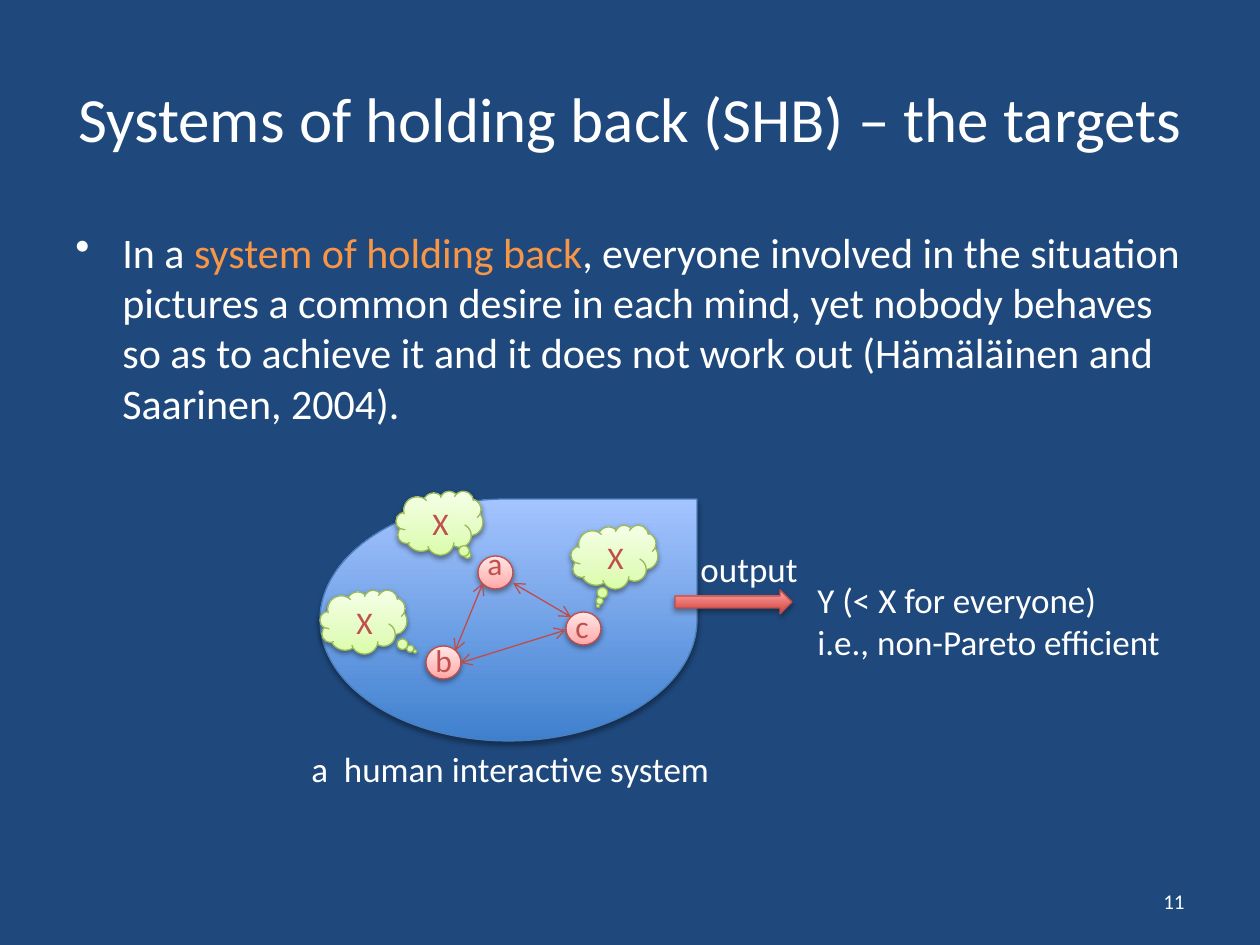
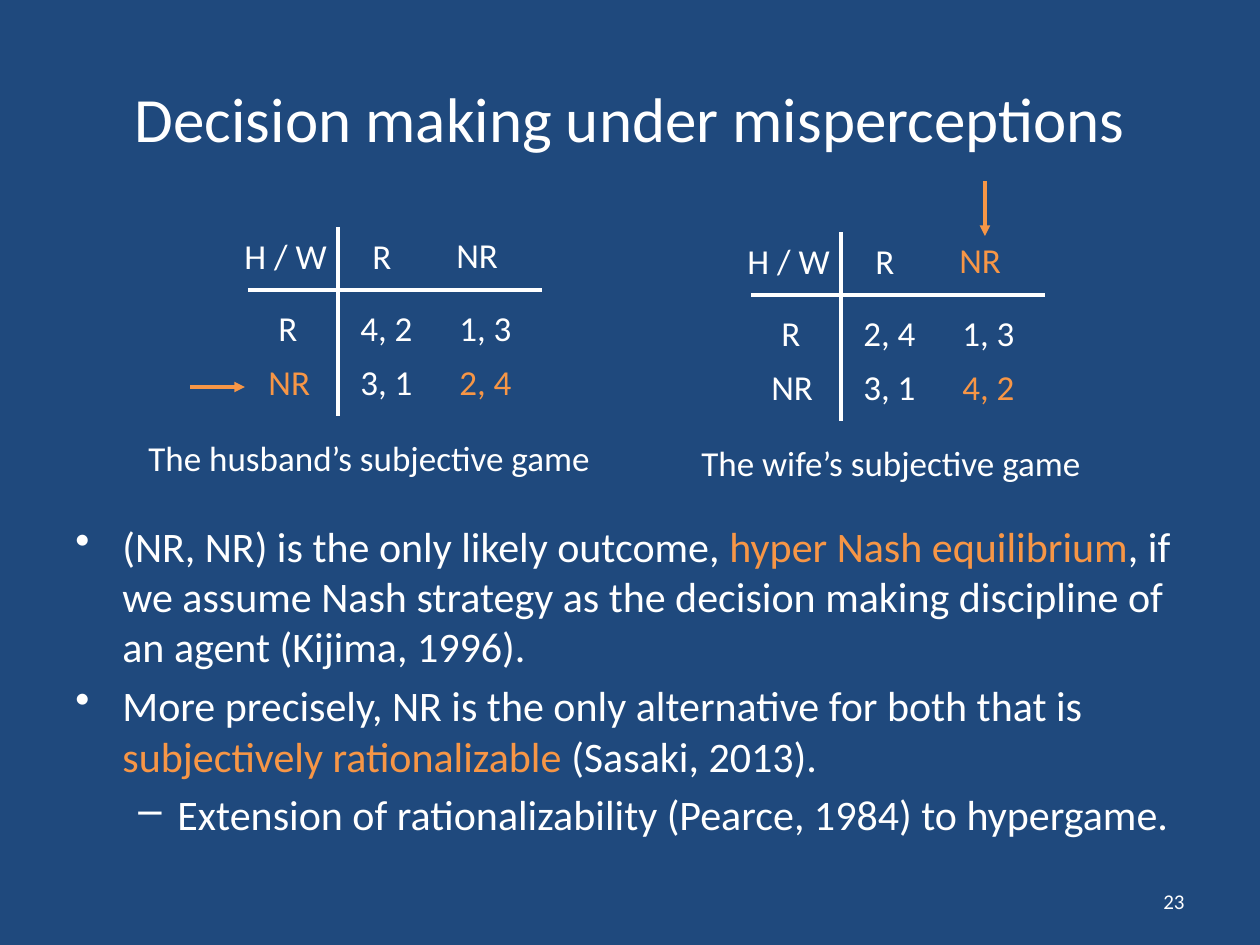
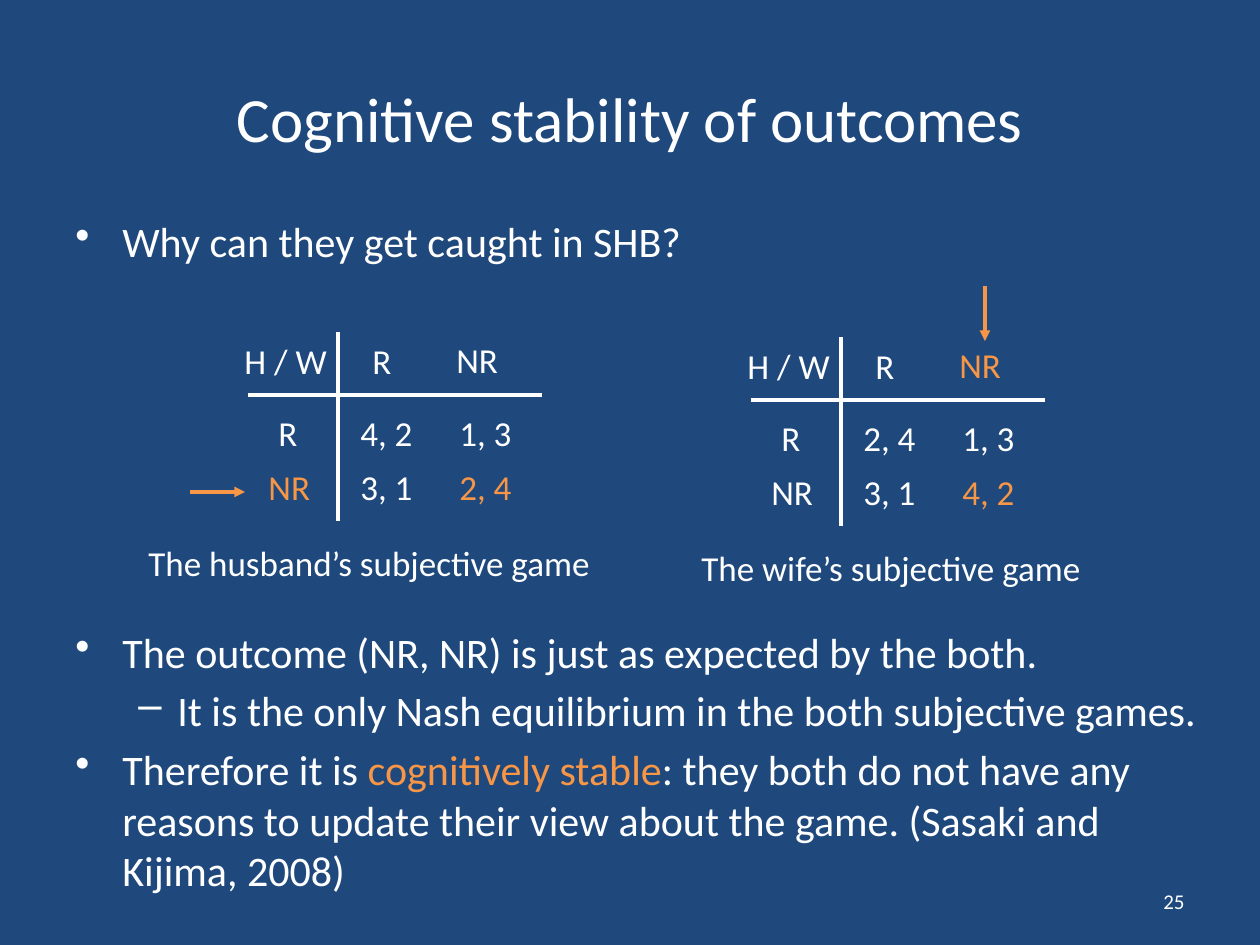
from dataclasses import dataclass

from lxml import etree
from pptx import Presentation
from pptx import util as u
from pptx.dml.color import RGBColor
from pptx.enum import shapes, text as txt
from pptx.oxml.ns import qn

PX = 7257  # EMU in one px, 126 px to the inch


@dataclass(frozen=True)
class Theme:
    font: str = "Calibri"
    ground: str = "1F497D"
    ink: str = "FFFFFF"
    accent: str = "F79646"
    letter: str = "C0504D"
    red_line: str = "BF4C48"
    blue_line: str = "4B7EBC"
    green_line: str = "98B955"
    blue: tuple = ((0, "3F80CE"), (100, "A4C4FF"))
    red: tuple = ((0, "D1403C"), (100, "FFA6A5"))
    pink: tuple = ((0, "FFA6A5"), (35, "FFC0BF"), (100, "FFE7E7"))
    green: tuple = ((0, "DAFDA7"), (35, "E4FCC2"), (100, "F5FFE7"))
    title: int = 36
    body: int = 24
    label: int = 20
    mark: int = 18
    number: int = 12


THEME = Theme()
# Bullet sign: left margin and hanging indent in px
BULLETS = {"•": (47, -47), "–": (102, -39)}


def write(page, area, content, size=THEME.label, color=THEME.ink, wrap=False,
          align=txt.PP_ALIGN.LEFT, anchor=txt.MSO_ANCHOR.TOP, gaps=None, tab=None):
    """Add text; |bars| mark accented words, a leading • or – makes a bullet."""
    box = page.shapes.add_textbox(*(n * PX for n in area))
    frame = box.text_frame
    frame.word_wrap = wrap
    frame.auto_size = txt.MSO_AUTO_SIZE.NONE if wrap else txt.MSO_AUTO_SIZE.SHAPE_TO_FIT_TEXT
    frame.vertical_anchor = anchor
    for index, line in enumerate(content.split("\n")):
        para = frame.paragraphs[0] if index == 0 else frame.add_paragraph()
        para.alignment = align
        if line[0] in BULLETS:
            sign, line = line.split(" ", 1)
            para.space_before = u.Pt((gaps or {}).get(index, 4.8))
            props = para._p.get_or_add_pPr()
            margin, indent = BULLETS[sign]
            props.set("marL", str(margin * PX))
            props.set("indent", str(indent * PX))
            etree.SubElement(props, qn("a:buChar"), char=sign)
        if tab:
            stops = etree.SubElement(para._p.get_or_add_pPr(), qn("a:tabLst"))
            etree.SubElement(stops, qn("a:tab"), pos=str(tab * PX), algn="l")
        for part, words in enumerate(line.split("|")):
            if words:
                span = para.add_run()
                span.text = words
                span.font.name = THEME.font
                span.font.size = u.Pt(size)
                span.font.color.rgb = RGBColor.from_string(THEME.accent if part % 2 else color)


def draw_line(page, ends, color=THEME.ink, width=2, head=None, tail=None):
    line = page.shapes.add_connector(shapes.MSO_CONNECTOR.STRAIGHT, *(n * PX for n in ends))
    line.line.color.rgb = RGBColor.from_string(color)
    line.line.width = u.Pt(width)
    props = line.element.spPr
    for tag, kind in (("a:headEnd", head), ("a:tailEnd", tail)):
        if kind:
            etree.SubElement(props.find(qn("a:ln")), qn(tag), type=kind)
    etree.SubElement(props, qn("a:effectLst"))


deck = Presentation()
deck.slide_width, deck.slide_height = u.Inches(10), u.Inches(7.5)
ground = deck.slide_master.background.fill
ground.solid()
ground.fore_color.rgb = RGBColor.from_string(THEME.ground)

# Title, page number, body area, body text, space before single paragraphs
PAGES = [
    ("Systems of holding back (SHB) – the targets", "11", (63, 220, 1134, 706),
     "• In a |system of holding back|, everyone involved in the situation pictures a common "
     "desire in each mind, yet nobody behaves so as to achieve it and it does not work out "
     "(Hämäläinen and Saarinen, 2004).", None),
    ("Decision making under misperceptions", "23", (63, 514, 1155, 412),
     "• (NR, NR) is the only likely outcome, |hyper Nash equilibrium|, if we assume Nash "
     "strategy as the decision making discipline of an agent (Kijima, 1996).\n"
     "• More precisely, NR is the only alternative for both that is "
     "|subjectively rationalizable |(Sasaki, 2013).\n"
     "– Extension of rationalizability (Pearce, 1984) to hypergame.", None),
    ("Cognitive stability of outcomes", "25", (63, 209, 1155, 717),
     "• Why can they get caught in SHB?\n"
     "• The outcome (NR, NR) is just as expected by the both.\n"
     "– It is the only Nash equilibrium in the both subjective games.\n"
     "• Therefore it is |cognitively stable|: they both do not have any reasons to update "
     "their view about the game. (Sasaki and Kijima, 2008)", {1: 206}),
]
pages = []
for title, number, area, body, gaps in PAGES:
    page = deck.slides.add_slide(deck.slide_layouts[6])
    write(page, (63, 38, 1134, 158), title, size=THEME.title, wrap=True,
          align=txt.PP_ALIGN.CENTER, anchor=txt.MSO_ANCHOR.MIDDLE)
    write(page, area, body, size=THEME.body, wrap=True, gaps=gaps)
    write(page, (903, 876, 294, 50), number, size=THEME.number, wrap=True,
          align=txt.PP_ALIGN.RIGHT, anchor=txt.MSO_ANCHOR.MIDDLE)
    pages.append(page)
system_page, *game_pages = pages

# Human interactive system: outline, agents, output arrow, thoughts
AGENTS = [("a", 478, 556, -18), ("b", 426, 646, -11), ("c", 566, 612, -11)]
THOUGHTS = [(396, 491, (0.332, 0.515)), (320, 590, (0.592, 0.46)), (571, 525, (-0.188, 0.762))]
KIND = shapes.MSO_SHAPE
figures = [(KIND.TEAR, (320, 499, 377, 242), THEME.blue, THEME.blue_line, 35, 1.8, ())]
figures += [(KIND.OVAL, (x, y, 35, 33), THEME.pink, THEME.red_line, 38, 1.6, ())
            for _, x, y, _ in AGENTS]
figures += [(KIND.RIGHT_ARROW, (675, 590, 117, 24), THEME.red, THEME.red_line, 35, 1.8, ())]
figures += [(KIND.CLOUD_CALLOUT, (x, y, 87, 64), THEME.green, THEME.green_line, 38, 1.6, pointer)
            for x, y, pointer in THOUGHTS]
for kind, area, stops, edge, opacity, distance, adjustments in figures:
    shape = system_page.shapes.add_shape(kind, *(n * PX for n in area))
    for index, value in enumerate(adjustments):
        shape.adjustments[index] = value
    shape.line.color.rgb = RGBColor.from_string(edge)
    shape.line.width = u.Pt(0.75)
    shape.fill.gradient()
    shape.fill.gradient_angle = 90
    props = shape.element.spPr
    stop_list = props.find(qn("a:gradFill")).find(qn("a:gsLst"))
    stop_list.clear()
    for position, color in stops:
        stop = etree.SubElement(stop_list, qn("a:gs"), pos=str(position * 1000))
        etree.SubElement(stop, qn("a:srgbClr"), val=color)
    shape.shadow.inherit = False
    shadow = etree.SubElement(props.find(qn("a:effectLst")), qn("a:outerShdw"),
                              blurRad=str(u.Pt(3.1)), dist=str(u.Pt(distance)),
                              dir="5400000", rotWithShape="0")
    tint = etree.SubElement(shadow, qn("a:srgbClr"), val="000000")
    etree.SubElement(tint, qn("a:alpha"), val=str(opacity * 1000))

# Interactions and labels of the system
for ends in ((455, 651, 483, 583), (460, 663, 566, 630), (571, 617, 513, 583)):
    draw_line(system_page, ends, THEME.red_line, 0.75, head="arrow", tail="arrow")
for name, x, y, rise in AGENTS:
    write(system_page, (x - 3, y + rise, 40, 50), name, size=THEME.mark, color=THEME.letter)
for x, y, _ in THOUGHTS:
    write(system_page, (x + 24, y + 7, 42, 50), "X", size=THEME.mark, color=THEME.letter)
write(system_page, (805, 572, 372, 97), "Y (< X for everyone)\ni.e., non-Pareto efficient")
write(system_page, (299, 741, 427, 55), "a  human interactive system")
write(system_page, (688, 541, 123, 55), "output")

# Subjective games: left, drop, row NR, column NR, payoffs, caption with left and width, arrow
GAMES = [
    (232, 0, "|NR|", "NR", ("4, 2\t1, 3", "3, 1\t|2, 4|"),
     "The husband’s subjective game", 136, 470, (190, 159, 245, 159)),
    (735, 5, "NR", "|NR|", ("2, 4\t1, 3", "3, 1\t|4, 2|"),
     "The wife’s subjective game", 689, 408, (985, -47, 985, 8)),
]
for page, top in zip(game_pages, (228, 333)):
    for left, drop, row, column, payoffs, caption, caption_left, caption_width, arrow in GAMES:
        y = top + drop
        draw_line(page, (left + 16, y + 62, left + 310, y + 62))
        draw_line(page, (left + 106, y + 188, left + 106, y - 1))
        for dx, dy, width, label in ((0, 0, 108, "H / W"), (128, 0, 45, "R"), (212, -1, 68, column),
                                     (34, 72, 45, "R"), (24, 126, 68, row)):
            write(page, (left + dx, y + dy, width, 55), label)
        for index, pair in enumerate(payoffs):
            write(page, (left + 116, y + 72 + 54 * index, 179, 55), pair, tab=99)
        write(page, (caption_left, y + 202, caption_width, 55), caption)
        x1, y1, x2, y2 = arrow
        draw_line(page, (x1, top + y1, x2, top + y2), THEME.accent, tail="triangle")

deck.save("out.pptx")
